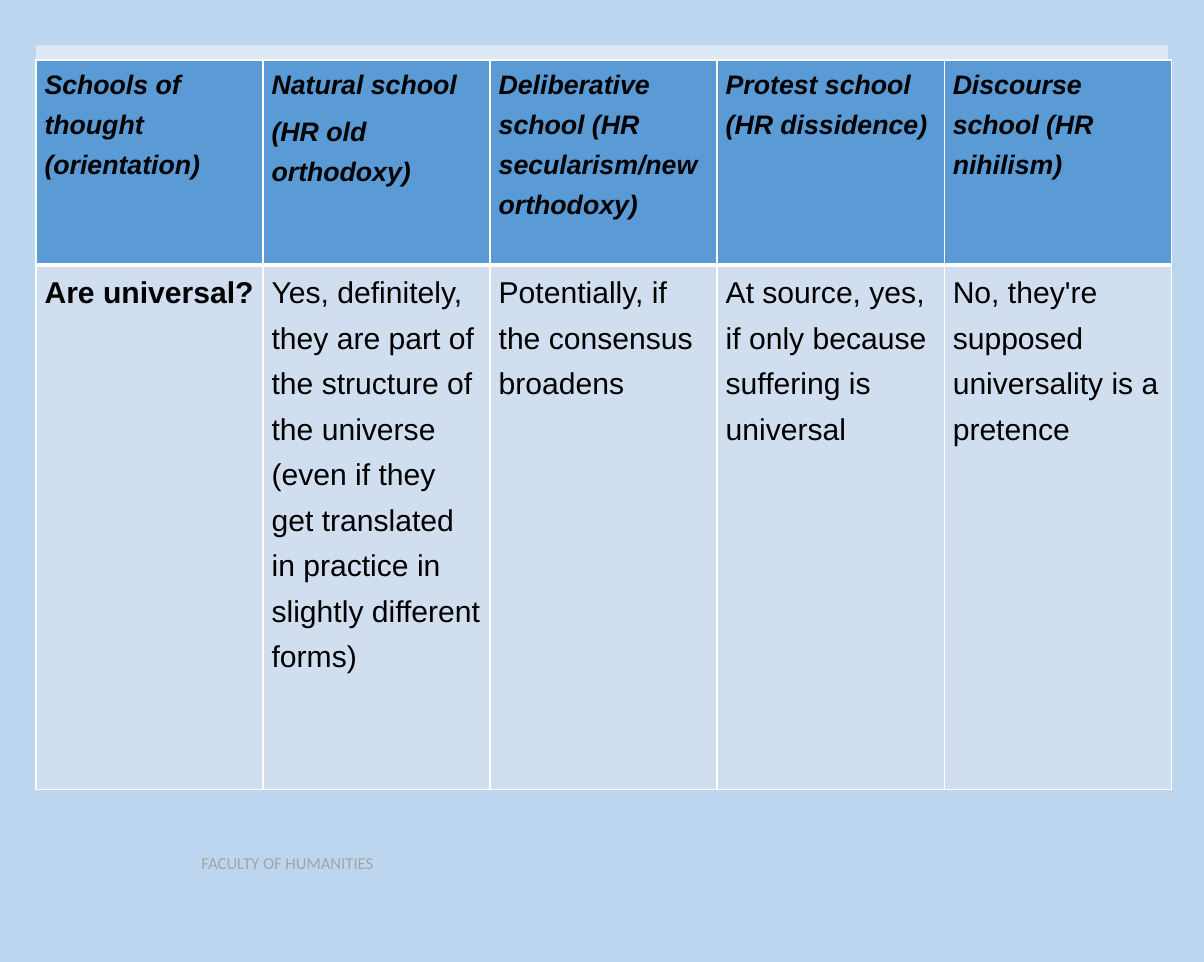
from lxml.etree import SubElement
from pptx import Presentation
from pptx.dml.color import RGBColor
from pptx.enum.shapes import MSO_SHAPE
from pptx.oxml.ns import qn
from pptx.util import Cm, Pt

HEADS = ["Schools of thought (orientation)",
         "Natural school\n(HR old orthodoxy)",
         "Deliberative school (HR secularism/new orthodoxy)",
         "Protest school (HR dissidence)",
         "Discourse school (HR nihilism)"]
VIEWS = ["Are universal?",
         "Yes, definitely, they are part of the structure of the universe "
         "(even if they get translated in practice in slightly different forms)",
         "Potentially, if the consensus broadens",
         "At source, yes, if only because suffering is universal",
         "No, they're supposed universality is a pretence"]


def color(code):
    return RGBColor.from_string(code)


class Deck:
    font, ink, rule = "Arial", "000000", "FFFFFF"
    head, body = "5B9BD5", "D0DEEF"

    def __init__(self, wide, high):
        self.show = Presentation()
        self.show.slide_width, self.show.slide_height = Cm(wide), Cm(high)
        self.slide = self.show.slides.add_slide(self.show.slide_layouts[6])

    def back(self, code):
        fill = self.slide.background.fill
        fill.solid()
        fill.fore_color.rgb = color(code)

    def style(self, part, size, code, font, bold=False, slant=False):
        for run in part.runs:
            run.font.name, run.font.size = font, Pt(size)
            run.font.bold, run.font.italic = bold, slant
            run.font.color.rgb = color(code)

    def panel(self, x, y, w, h, code):
        shape = self.slide.shapes.add_shape(
            MSO_SHAPE.RECTANGLE, Cm(x), Cm(y), Cm(w), Cm(h))
        shape.shadow.inherit = False
        shape.fill.solid()
        shape.fill.fore_color.rgb = color(code)
        shape.line.fill.background()

    def label(self, x, y, w, h, text, size, code, font):
        frame = self.slide.shapes.add_textbox(
            Cm(x), Cm(y), Cm(w), Cm(h)).text_frame
        frame.word_wrap = True
        frame.text = text
        self.style(frame.paragraphs[0], size, code, font)

    def border(self, cell, side, width):
        line = SubElement(cell._tc.get_or_add_tcPr(), qn("a:" + side),
                          w=str(Pt(width)))
        fill = SubElement(line, qn("a:solidFill"))
        SubElement(fill, qn("a:srgbClr"), val=self.rule)

    def cell(self, cell, text, top, first):
        cell.margin_left = cell.margin_right = Cm(0.18)
        cell.margin_top = cell.margin_bottom = 0
        # Borders come before the fill in the cell's XML
        for side in ("lnL", "lnR", "lnT", "lnB"):
            thick = side == ("lnB" if top else "lnT")
            self.border(cell, side, 3 if thick else 1)
        cell.fill.solid()
        cell.fill.fore_color.rgb = color(self.head if top else self.body)
        cell.text_frame.text = text
        for i, part in enumerate(cell.text_frame.paragraphs):
            part.line_spacing = 1.35
            part.space_before = Pt(2 if i else 0)
            part.space_after = Pt(2)
            self.style(part, 16 if top else 18, self.ink, self.font,
                       bold=top or first, slant=top)

    def table(self, x, y, w, highs, rows):
        count = len(rows[0])
        grid = self.slide.shapes.add_table(
            len(rows), count, Cm(x), Cm(y), Cm(w), Cm(sum(highs))).table
        for col in grid.columns:
            col.width = Cm(w / count)
        for r, (high, row) in enumerate(zip(highs, rows)):
            grid.rows[r].height = Cm(high)
            for c, text in enumerate(row):
                self.cell(grid.cell(r, c), text, r == 0, c == 0)


def main():
    deck = Deck(25.4, 20.3)
    deck.back("BBD6EE")

    # Footer
    deck.label(4, 17.88, 10.77, 0.69, "FACULTY OF HUMANITIES",
               10, "A5A5A5", "Calibri")

    # Panel behind the table
    deck.panel(0.76, 0.96, 23.88, 15.4, "DDEAF6")

    # Schools compared
    deck.table(0.76, 1.27, 23.95, [4.32, 11.07], [HEADS, VIEWS])

    deck.show.save("out.pptx")


if __name__ == "__main__":
    main()
